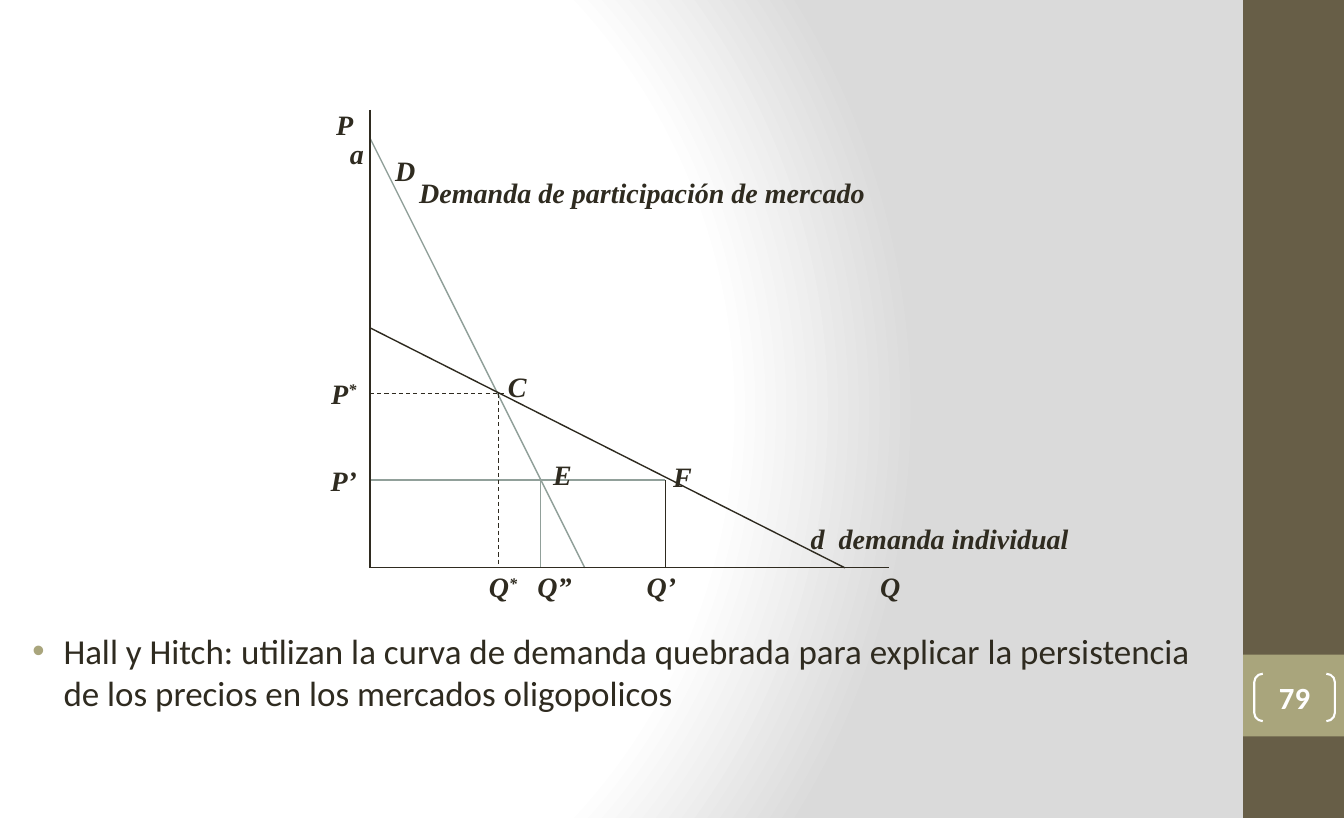
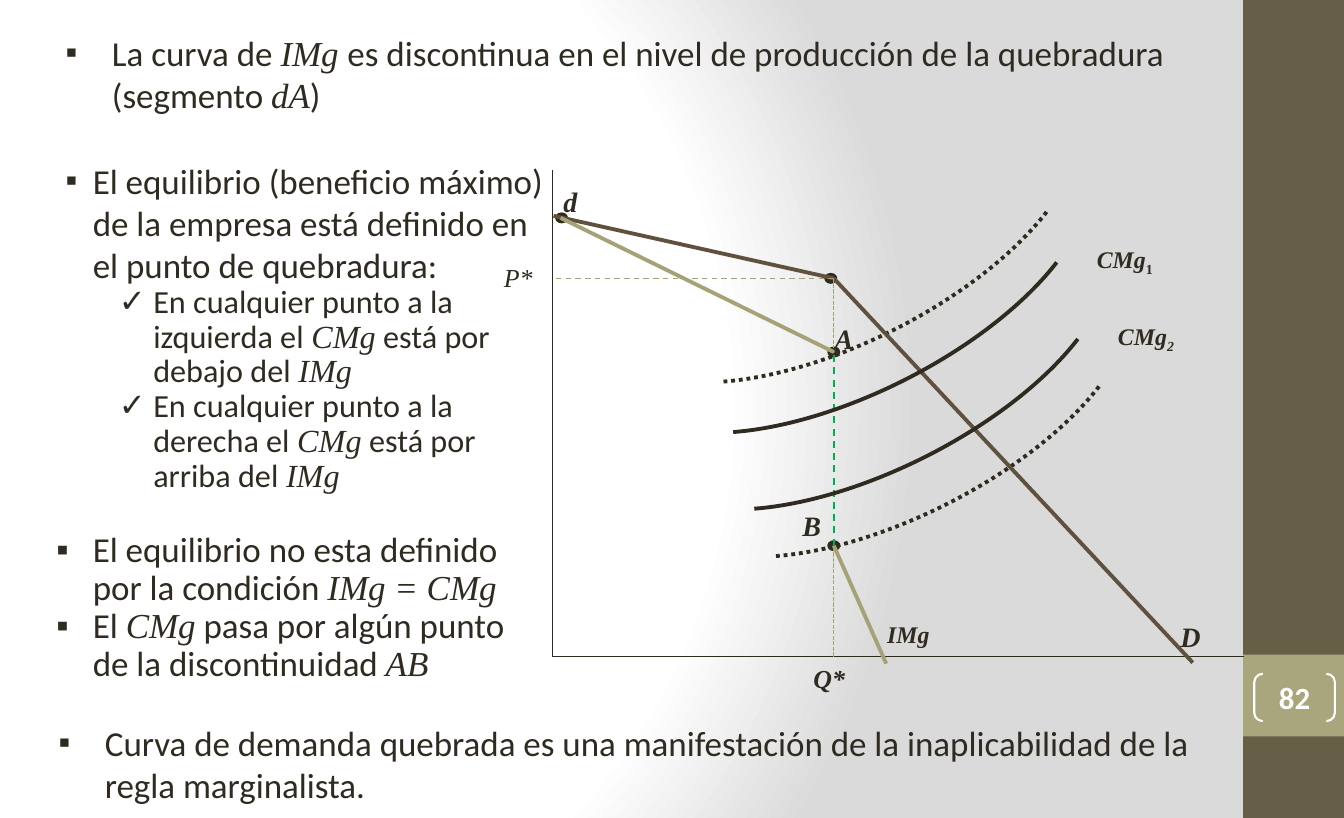
from dataclasses import dataclass

from lxml.etree import SubElement
from pptx import Presentation
from pptx.dml.color import RGBColor
from pptx.enum.dml import MSO_LINE as Dash
from pptx.enum.shapes import MSO_CONNECTOR as Connector
from pptx.enum.shapes import MSO_SHAPE as Preset
from pptx.enum.text import MSO_ANCHOR as Anchor
from pptx.enum.text import MSO_AUTO_SIZE as AutoSize
from pptx.enum.text import PP_ALIGN as Align
from pptx.oxml import parse_xml
from pptx.oxml.ns import nsdecls, qn
from pptx.util import Inches, Pt


@dataclass(frozen=True)
class Theme:
    """Colours, fonts and type sizes shared by the slides."""
    ink: str = "2F2B20"
    axis: str = "2E2A1F"
    band: str = "675E47"
    accent: str = "A9A57C"
    sage: str = "91A09A"
    brown: str = "5F513E"
    olive: str = "A6A278"
    green: str = "00B050"
    white: str = "FFFFFF"
    shade: str = "DADADA"
    sans: str = "Calibri"
    serif: str = "Times New Roman"
    text: float = 25
    detail: float = 23
    number: float = 22
    point: float = 20
    value: float = 18.5
    curve: float = 17


@dataclass(frozen=True)
class Box:
    """A region measured in grid columns and rows."""
    col: float
    row: float
    cols: float
    rows: float

    def emu(self):
        """Return left, top, width and height in slide units."""
        return [cells(n) for n in (self.col, self.row, self.cols, self.rows)]


@dataclass(frozen=True)
class Label:
    """A name placed at a quantity and price of a graph."""
    text: str
    q: float
    p: float
    size: float = Theme.point
    width: float = 10
    align: Align = Align.LEFT
    script: str = ""
    shift: int = 0
    upright: bool = False
    bold: bool = True


@dataclass(frozen=True)
class Item:
    """A list paragraph whose text between underscores is a formula."""
    text: str
    indent: float
    hanging: float
    mark: str = "▪"
    size: float = Theme.text
    before: float = 0
    spacing: float = 1
    mark_size: int = 100
    mark_color: str = Theme.ink


THEME = Theme()
COLS, ROWS = 133.3, 81.1
BAND = Box(123.3, 0, 10, ROWS)
NUMBER = Box(123.3, 64.9, 10, 8.1)


def cells(count):
    """Convert grid cells to slide units."""
    return Inches(count / 10)


def color(code):
    """Turn a hexadecimal code into a colour."""
    return RGBColor.from_string(code)


def style_run(run, size, name, code=THEME.ink, bold=False, italic=False):
    """Set the font of a run."""
    font = run.font
    font.size, font.name, font.bold, font.italic = Pt(size), name, bold, italic
    font.color.rgb = color(code)


def style_line(line, code, width, dash=Dash.SOLID):
    """Set the colour, width and dash of a line."""
    line.color.rgb = color(code)
    line.width = Pt(width)
    line.dash_style = dash


def add_preset(slide, preset, box, fill=None):
    """Add a shape without shadow or outline."""
    shape = slide.shapes.add_shape(preset, *box.emu())
    shape.shadow.inherit = False
    shape.line.fill.background()
    if fill:
        shape.fill.solid()
        shape.fill.fore_color.rgb = color(fill)
    else:
        shape.fill.background()
    return shape


def set_frame(frame, across, down):
    """Make a text frame wrap with the given insets in cells."""
    frame.word_wrap = True
    frame.auto_size = AutoSize.NONE
    frame.vertical_anchor = Anchor.TOP
    frame.margin_left = frame.margin_right = cells(across)
    frame.margin_top = frame.margin_bottom = cells(down)


def build_master(master, slide):
    """Give the master its gradient and side bands."""
    master.background.fill.solid()
    solid = master.element.xpath(".//p:bgPr/a:solidFill")[0]
    stops = "".join(
        f'<a:gs pos="{share * 1000}"><a:srgbClr val="{code}"/></a:gs>'
        for share, code in ((0, THEME.white), (75, THEME.white), (100, THEME.shade)))
    gradient = parse_xml(
        f'<a:gradFill {nsdecls("a")} rotWithShape="1"><a:gsLst>{stops}</a:gsLst>'
        '<a:path path="circle"><a:fillToRect l="20000" t="50000" r="100000" b="50000"/>'
        '</a:path></a:gradFill>')
    solid.getparent().replace(solid, gradient)
    for order, (box, fill) in enumerate(((BAND, THEME.band), (NUMBER, THEME.accent))):
        band = add_preset(slide, Preset.RECTANGLE, box, fill).element
        band.xpath(".//p:cNvPr")[0].set("id", str(100 + order))
        master.shapes.element.insert(2 + order, band)


def draw_number(slide, box, number):
    """Write the slide number between brackets inside its band."""
    inner = Box(box.col + 1.1, box.row + 1.9, box.cols - 2, box.rows - 3.4)
    bracket = add_preset(slide, Preset.DOUBLE_BRACKET, inner)
    bracket.adjustments[0] = 0.18
    style_line(bracket.line, THEME.white, 1.5)
    frame = bracket.text_frame
    set_frame(frame, 0, 0)
    frame.vertical_anchor = Anchor.MIDDLE
    frame.text = number
    paragraph = frame.paragraphs[0]
    paragraph.alignment = Align.CENTER
    style_run(paragraph.runs[0], THEME.number, THEME.sans, THEME.white, bold=True)


def write_item(paragraph, item):
    """Fill one list paragraph and give it its bullet."""
    for order, part in enumerate(item.text.split("_")):
        if part:
            run = paragraph.add_run()
            run.text = part
            formula = order % 2 == 1
            style_run(run, item.size, THEME.serif if formula else THEME.sans, italic=formula)
    paragraph.alignment = Align.LEFT
    paragraph.space_before = Pt(item.before)
    paragraph.line_spacing = item.spacing
    props = paragraph._p.get_or_add_pPr()
    props.set("marL", str(cells(item.indent)))
    props.set("indent", str(cells(-item.hanging)))
    tint = SubElement(props, qn("a:buClr"))
    SubElement(tint, qn("a:srgbClr")).set("val", item.mark_color)
    SubElement(props, qn("a:buSzPct")).set("val", str(item.mark_size * 1000))
    SubElement(props, qn("a:buFont")).set("typeface", "Arial")
    SubElement(props, qn("a:buChar")).set("char", item.mark)


def write_list(holder, box, items):
    """Place a list in its box."""
    holder.left, holder.top, holder.width, holder.height = box.emu()
    frame = holder.text_frame
    set_frame(frame, 1.2, 0.6)
    for order, item in enumerate(items):
        write_item(frame.add_paragraph() if order else frame.paragraphs[0], item)


class Graph:
    """A price and quantity graph measured from the origin of its axes."""

    def __init__(self, slide, box):
        """Keep the slide and the box between the axes."""
        self.slide, self.box = slide, box

    def place(self, q, p):
        """Turn a quantity and a price into grid columns and rows."""
        return self.box.col + q, self.box.row + self.box.rows - p

    def line(self, start, end, code, width, dash=Dash.SOLID):
        """Draw a straight line between two points."""
        ends = [cells(n) for n in (*self.place(*start), *self.place(*end))]
        line = self.slide.shapes.add_connector(Connector.STRAIGHT, *ends)
        style_line(line.line, code, width, dash)
        SubElement(line.element.spPr, qn("a:effectLst"))

    def axes(self, code, width):
        """Draw both axes along the box."""
        self.line((0, self.box.rows), (0, 0), code, width)
        self.line((0, 0), (self.box.cols, 0), code, width)

    def centred(self, q, p, cols, rows):
        """Return a box centred on a point."""
        col, row = self.place(q, p)
        return Box(col - cols / 2, row - rows / 2, cols, rows)

    def dot(self, q, p):
        """Mark a point."""
        dot = add_preset(self.slide, Preset.DONUT, self.centred(q, p, 1, 0.8), THEME.ink)
        style_line(dot.line, THEME.ink, 2)

    def cost_curve(self, q, p, dash):
        """Draw a marginal cost curve."""
        arc = add_preset(self.slide, Preset.ARC, self.centred(q, p, 51, 22.4))
        arc.adjustments[0], arc.adjustments[1] = 121.15, 200.91
        arc.rotation = 153.3
        style_line(arc.line, THEME.ink, 2.75, dash)

    def label(self, label):
        """Write a label at its point."""
        col, row = self.place(label.q, label.p)
        if label.align == Align.CENTER:
            col -= label.width / 2
        box = Box(col, row, label.width, 4.3)
        frame = self.slide.shapes.add_textbox(*box.emu()).text_frame
        set_frame(frame, 1, 0.5)
        frame.text = label.text
        paragraph = frame.paragraphs[0]
        paragraph.alignment = label.align
        style_run(paragraph.runs[0], label.size, THEME.serif, bold=label.bold, italic=True)
        if label.script:
            script = paragraph.add_run()
            script.text = label.script
            style_run(script, label.size, THEME.serif, bold=True, italic=not label.upright)
            script._r.get_or_add_rPr().set("baseline", str(label.shift * 1000))


def draw_demand(slide, box):
    """Draw the market share and individual demand curves."""
    graph = Graph(slide, box)
    p_star, p_low, q_star, q_low, q_far = 17.3, 8.7, 12.7, 16.9, 29.3
    graph.line((0, 42.6), (21.3, 0), THEME.sage, 1)
    graph.line((0, p_star), (q_star + 0.6, p_star), THEME.ink, 0.75, Dash.DASH)
    graph.line((0, p_low), (q_far, p_low), THEME.sage, 1)
    graph.line((q_far, p_low), (q_far, 0), THEME.axis, 1)
    graph.line((q_low, p_low), (q_low, 0), THEME.sage, 1)
    graph.line((0, 23.8), (47.1, 0), THEME.axis, 1)
    graph.axes(THEME.ink, 0.75)
    graph.line((q_star, p_star), (q_star, 0.3), THEME.ink, 0.75, Dash.DASH)
    names = (("P", -2.5, 46.1), ("a", -1.3, 43.3), ("D", 3.5, 41.6), ("C", 14.6, 20.2),
             ("E", 19.1, 11.4), ("F", 31, 11.2), ("d", 44.4, 5.1), ("P’", -2.6, 10.8),
             ("Q”", 18.3, 0.3), ("Q’", 28.9, 0.3), ("Q", 51.6, 0.3))
    for name, q, p in names:
        graph.label(Label(name, q, p, align=Align.CENTER))
    for name, q, p in (("P", -2.6, 19.5), ("Q", 13.2, 0.3)):
        graph.label(Label(name, q, p, align=Align.CENTER, script="*", shift=30))
    graph.label(Label("Demanda de participación de mercado", 3.9, 39.4, width=54.7))
    graph.label(Label("demanda individual", 45.5, 5.1, width=27.5))


def draw_kinked(slide, box):
    """Draw the kinked demand with its marginal revenue and costs."""
    graph = Graph(slide, box)
    q_star, p_star, p_a, p_b = 27.9, 37.5, 30.2, 11
    for q, p in ((28.8, 42.4), (34, 25.1)):
        graph.cost_curve(q, p, Dash.ROUND_DOT)
    for q, p in ((q_star, p_a), (q_star - 0.3, p_star), (q_star, p_b), (0.9, 43.5)):
        graph.dot(q, p)
    graph.axes(THEME.axis, 1)
    graph.line((0.1, 43.7), (q_star, p_star), THEME.brown, 2.75)
    graph.line((q_star, p_star), (63.5, -0.6), THEME.brown, 2.75)
    graph.line((0.8, 43.5), (q_star, p_a), THEME.olive, 2.75)
    graph.line((q_star, p_star), (q_star, p_a), THEME.olive, 1, Dash.SQUARE_DOT)
    graph.line((q_star, p_b), (33.1, -0.7), THEME.olive, 2.75)
    graph.line((q_star, p_b), (q_star, p_a), THEME.green, 1.25, Dash.DASH)
    graph.line((q_star, 0), (q_star, p_b), THEME.olive, 1, Dash.SQUARE_DOT)
    graph.line((q_star, p_star), (0, p_star), THEME.olive, 1, Dash.DASH)
    for q, p in ((29.8, 37.4), (31.9, 29.8)):
        graph.cost_curve(q, p, Dash.SOLID)
    for label in (Label("d", 0.1, 47.3), Label("A", 27, 33.7), Label("B", 23.8, 15.2),
                  Label("D", 61.3, 4.2), Label("IMg", 32.2, 4.2, THEME.curve),
                  Label("Q*", 24.9, -0.1, THEME.value),
                  Label("P*", -5.8, 39.7, THEME.value, bold=False),
                  Label("CMg", 53, 41.3, THEME.curve, script="1", shift=-25, upright=True),
                  Label("CMg", 55.1, 33.7, THEME.curve, script="2", shift=-25)):
        graph.label(label)


def add_slide(deck, number):
    """Add a numbered slide and return it with its body placeholder."""
    slide = deck.slides.add_slide(deck.slide_layouts[1])
    title = slide.shapes.title.element
    title.getparent().remove(title)
    draw_number(slide, NUMBER, number)
    return slide, slide.placeholders[1]


def main():
    """Build and save the two slides."""
    deck = Presentation()
    deck.slide_width, deck.slide_height = cells(COLS), cells(ROWS)

    demand, body = add_slide(deck, "79")
    build_master(deck.slide_master, demand)
    write_list(body, Box(0.5, 61.8, 122.8, 12.3), [
        Item("Hall y Hitch: utilizan la curva de demanda quebrada para explicar la "
             "persistencia de los precios en los mercados oligopolicos",
             4.6, 3.1, "•", mark_color=THEME.accent)])
    draw_demand(demand, Box(36.7, 10.9, 51.5, 45.4))

    kinked, body = add_slide(deck, "82")
    detail = dict(indent=9.6, hanging=3.4, mark="✓", size=THEME.detail, spacing=0.9)
    closing = dict(indent=3.6, hanging=3.6, spacing=0.9)
    write_list(body, Box(4.4, 15.2, 50.8, 53.2), [
        Item("El equilibrio (beneficio máximo) de la empresa está definido en el punto "
             "de quebradura:", 3.6, 2.7, mark_size=95),
        Item("En cualquier punto a la izquierda el _CMg_ está por debajo del _IMg_", **detail),
        Item("En cualquier punto a la derecha el _CMg_ está por arriba del _IMg_", **detail),
        Item("El equilibrio no esta definido por la condición _IMg = CMg_",
             before=27.5, **closing),
        Item("El _CMg_ pasa por algún punto de la discontinuidad _AB_", **closing)])
    for box, text in (
            (Box(4.4, 2.5, 118.9, 9.7), "La curva de _IMg _es discontinua en el nivel de "
             "producción de la quebradura (segmento _dA_)"),
            (Box(3.7, 70.9, 120.8, 9.7), "Curva de demanda quebrada es una manifestación "
             "de la inaplicabilidad de la regla marginalista.")):
        remark = kinked.shapes.add_textbox(*box.emu())
        write_list(remark, box, [Item(text, 5.5, 4.6, mark_size=95)])
    draw_kinked(kinked, Box(54.8, 16.9, 68.6, 48.2))

    deck.save("out.pptx")


if __name__ == "__main__":
    main()
